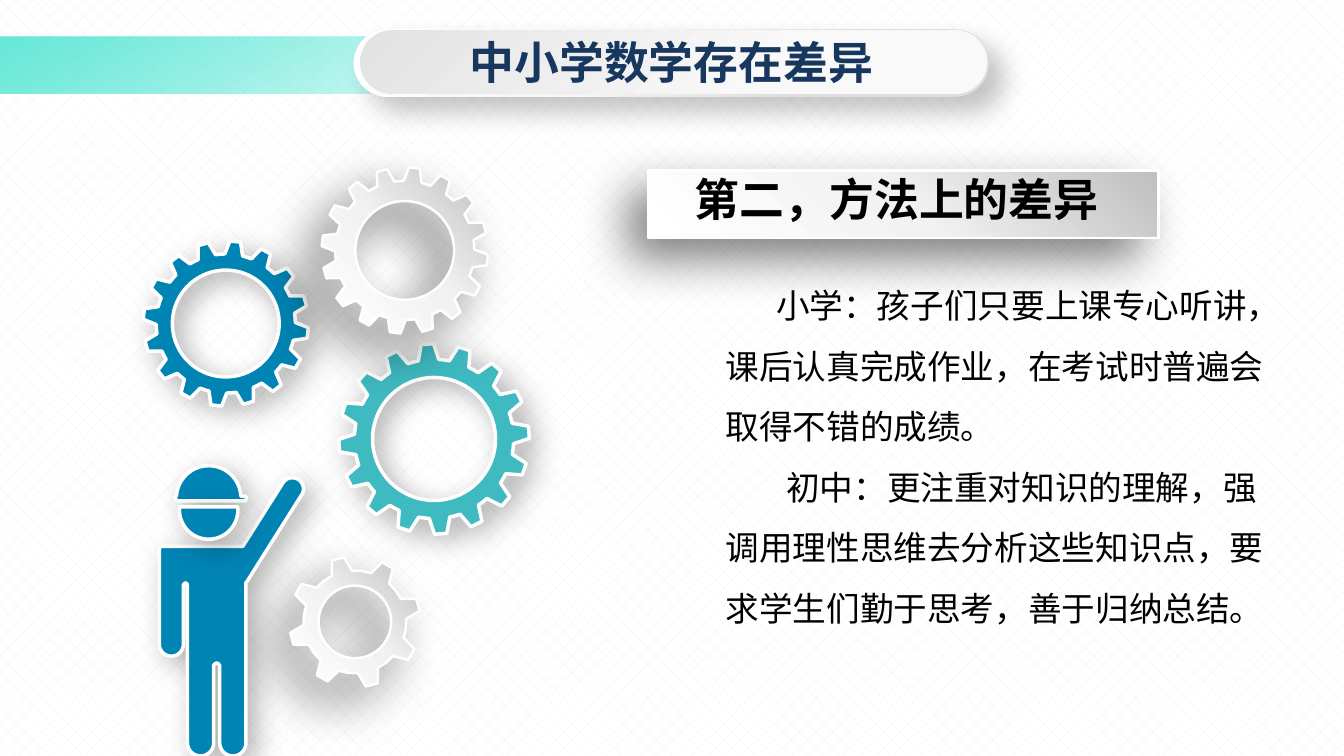
import math
from dataclasses import dataclass

import pptx
import pptx.dml.color
import pptx.enum.dml
import pptx.enum.shapes
import pptx.enum.text
import pptx.oxml
import pptx.oxml.ns
import pptx.util

Inches = pptx.util.Inches
Pt = pptx.util.Pt
RGB = pptx.dml.color.RGBColor.from_string
SHAPE = pptx.enum.shapes.MSO_SHAPE
ALIGN = pptx.enum.text.PP_ALIGN
MIDDLE = pptx.enum.text.MSO_ANCHOR.MIDDLE
NS = pptx.oxml.ns.nsdecls("a")


@dataclass(frozen=True)
class Theme:
    """Gradients hold (position, colour, opacity) stops and an angle;
    shadows hold opacity, blur, distance and angle."""
    navy: str = "17375E"
    black: str = "000000"
    white: str = "FFFFFF"
    mist: str = "F2F2F2"
    blue: str = "0084B4"
    teal: str = "3EBAC0"
    silver: tuple = (((0, "FFFFFF", 100), (50, "F2F2F2", 100), (100, "BFBFBF", 100)), 315)
    band: tuple = (((1, "4EE4D2", 85), (50, "20E2CB", 0)), 60)
    rim: tuple = (((1, "DEDEDE", 100), (30, "E0E0E0", 100),
                   (61, "F6F6F6", 100), (100, "FFFFFF", 100)), 225)
    pill: tuple = (((0, "E3E3E3", 100), (67, "F9F9F9", 100)), 45)
    soft: tuple = (24, 19, 14, 45)
    near: tuple = (30, 20, 8, 45)
    deep: tuple = (50, 35, 20, 135)
    head: int = 32
    text: int = 24
    sans: str = "Noto Sans CJK SC"
    latin: str = "Calibri"


THEME = Theme()


def paint(shape, fill, line=0, shade=None):
    if isinstance(fill, str):
        shape.fill.solid()
        shape.fill.fore_color.rgb = RGB(fill)
    else:
        stops, angle = fill
        shape.fill.gradient()
        marks = "".join(
            f'<a:gs pos="{pos * 1000}"><a:srgbClr val="{tone}">'
            f'<a:alpha val="{alpha * 1000}"/></a:srgbClr></a:gs>'
            for pos, tone, alpha in stops)
        props = shape.element.spPr
        props.replace(props.find(pptx.oxml.ns.qn("a:gradFill")), pptx.oxml.parse_xml(
            f'<a:gradFill {NS} rotWithShape="1"><a:gsLst>{marks}</a:gsLst>'
            f'<a:lin ang="{angle * 60000}" scaled="0"/></a:gradFill>'))
    if line:
        shape.line.color.rgb = RGB(THEME.white)
        shape.line.width = Pt(line)
    else:
        shape.line.fill.background()
    shape.shadow.inherit = False
    if shade:
        alpha, blur, dist, angle = shade
        effect = shape.element.spPr.find(pptx.oxml.ns.qn("a:effectLst"))
        effect.append(pptx.oxml.parse_xml(
            f'<a:outerShdw {NS} blurRad="{Pt(blur)}" dist="{Pt(dist)}" '
            f'dir="{angle * 60000}" algn="ctr" rotWithShape="0">'
            f'<a:srgbClr val="{THEME.black}"><a:alpha val="{alpha * 1000}"/>'
            f'</a:srgbClr></a:outerShdw>'))


def block(slide, kind, box):
    return slide.shapes.add_shape(kind, *map(Inches, box))


def style(para, size, tone, bold=False, face=THEME.sans):
    for run in para.runs:
        font = run.font
        font.size, font.bold, font.name = Pt(size), bold, face
        font.color.rgb = RGB(tone)
        font._element.append(pptx.oxml.parse_xml(
            f'<a:ea {NS} typeface="{THEME.sans}"/>'))


def arc(x, y, radius, start, end, steps=24):
    turns = [math.radians(start + (end - start) * i / steps) for i in range(steps + 1)]
    return [(x + radius * math.cos(t), y + radius * math.sin(t)) for t in turns]


def trace(slide, left, top, *rings):
    """Draw closed rings, given in inches from left and top, as one shape."""
    form = None
    for ring in rings:
        spots = [(Inches(left + x), Inches(top + y)) for x, y in ring]
        if form is None:
            form = slide.shapes.build_freeform(*spots[0], scale=1.0)
        else:
            form.move_to(*spots[0])
        form.add_line_segments(spots[1:], close=True)
    return form.convert_to_shape()


def header(slide, box, text):
    left, top, width, height = box
    paint(block(slide, SHAPE.RECTANGLE, (0, top + 0.07, 13.16, 0.57)), THEME.band)
    inner = (left + 0.06, top + 0.01, width - 0.08, height - 0.04)
    for place, fill, shade in ((box, THEME.rim, THEME.soft), (inner, THEME.pill, None)):
        pill = block(slide, SHAPE.ROUNDED_RECTANGLE, place)
        pill.adjustments[0] = 0.5
        paint(pill, fill, shade=shade)
    title = slide.shapes.title
    title.left, title.top = Inches(left + 0.3), Inches(top)
    title.width, title.height = Inches(width - 0.6), Inches(0.64)
    slide.shapes.element.append(title.element)  # bring in front of the pill
    frame = title.text_frame
    frame.text = text
    frame.vertical_anchor = MIDDLE
    frame.paragraphs[0].alignment = ALIGN.CENTER
    style(frame.paragraphs[0], THEME.head, THEME.navy, True)


def gear(slide, box, teeth, turn, tip, foot, root, hole, look):
    """tip and foot are half-widths of a tooth in degrees; root and hole are radii."""
    left, top, size = box
    mid = size / 2
    step = 360 / teeth
    rim = []
    for i in range(teeth):
        at = turn + i * step
        for angle, radius in ((at - foot, root), (at - tip, mid), (at + tip, mid),
                              (at + foot, root), (at + step / 2, root)):
            rim += arc(mid, mid, radius, angle, angle, 1)[:1]
    paint(trace(slide, left, top, rim, arc(mid, mid, hole, 0, 360, 72)), *look)


def gears(slide, left, top):
    flat, pale = (2.5, THEME.near), (THEME.silver, 1.75, THEME.deep)
    for x, y, size, *cut in (
            (1.94, 1.75, 1.89, 16, -4, 3.7, 7.4, 0.79, 0.61, (THEME.teal, *flat)),
            (0, 0.73, 1.64, 16, 6.6, 3.7, 7.4, 0.69, 0.53, (THEME.blue, *flat)),
            (1.77, 0, 1.65, 16, 6.6, 3.7, 7.4, 0.69, 0.49, pale),
            (1.45, 3.86, 1.3, 8, -15, 5.4, 11.7, 0.51, 0.36, pale)):
        gear(slide, (left + x, top + y, size), *cut)


def worker(slide, left, top):
    cap = arc(0.49, 0.32, 0.32, 183, 357) + [
        (0.85, 0.3), (0.87, 0.32), (0.85, 0.35), (0.18, 0.35), (0.15, 0.32), (0.17, 0.3)]
    torso = [
        (0.81, 0.8), (0.83, 0.8), *arc(1.32, 0.23, 0.11, -149, 37),
        (0.87, 1.15), (0.86, 1.16), *arc(0.73, 2.75, 0.13, 0, 180),
        (0.6, 1.98), (0.58, 1.96), (0.56, 1.96), (0.54, 1.98),
        *arc(0.41, 2.75, 0.13, 0, 180), (0.28, 1.18), (0.26, 1.16), (0.24, 1.18),
        *arc(0.12, 1.77, 0.12, 0, 180), (0, 0.82), (0.02, 0.8)]
    face = arc(0.49, 0.44, 0.29, -6, 186)
    for ring in (cap, torso, face):
        paint(trace(slide, left, top, ring), THEME.blue, 2.5, THEME.near)


def banner(slide, box, text):
    left, top, width, height = box
    paint(block(slide, SHAPE.RECTANGLE, box), THEME.silver, 1.75, THEME.deep)
    label = slide.shapes.add_textbox(*map(Inches, (left + 0.17, top, width - 0.47, 0.7)))
    frame = label.text_frame
    frame.word_wrap = True
    frame.vertical_anchor = MIDDLE
    frame.margin_left = frame.margin_right = Inches(0.07)
    frame.margin_top, frame.margin_bottom = Inches(0.04), Inches(0.18)
    frame.text = text
    frame.paragraphs[0].alignment = ALIGN.CENTER
    style(frame.paragraphs[0], THEME.head, THEME.black, True, THEME.latin)


def notes(slide, box, items):
    """Write paragraphs, each with its own first-line indent."""
    frame = slide.shapes.add_textbox(*map(Inches, box)).text_frame
    frame.word_wrap = True
    frame.text = "\n".join(text for _, text in items)
    for para, (indent, _) in zip(frame.paragraphs, items):
        para.line_spacing = 1.5
        para._p.get_or_add_pPr().set("indent", str(Inches(indent)))
        style(para, THEME.text, THEME.black)


def main():
    deck = pptx.Presentation()
    deck.slide_width, deck.slide_height = Inches(13.33), Inches(7.5)
    slide = deck.slides.add_slide(deck.slide_layouts[5])
    back = slide.background.fill
    back.patterned()
    back.pattern = pptx.enum.dml.MSO_PATTERN.DOTTED_DIAMOND
    back.fore_color.rgb, back.back_color.rgb = RGB(THEME.mist), RGB(THEME.white)
    header(slide, (3.51, 0.29, 6.3, 0.67), "中小学数学存在差异")
    gears(slide, 1.42, 1.66)
    worker(slide, 1.58, 4.62)
    banner(slide, (6.43, 1.69, 5.06, 0.67), "第二，方法上的差异")
    notes(slide, (7.1, 2.58, 5.76, 3.73), (
        (0.5, "小学：孩子们只要上课专心听讲，课后认真完成作业，在考试时普遍会取得不错的成绩。"),
        (0.6, "初中：更注重对知识的理解，强调用理性思维去分析这些知识点，要求学生们勤于思考，善于归纳总结。")))
    deck.save("out.pptx")


if __name__ == "__main__":
    main()
